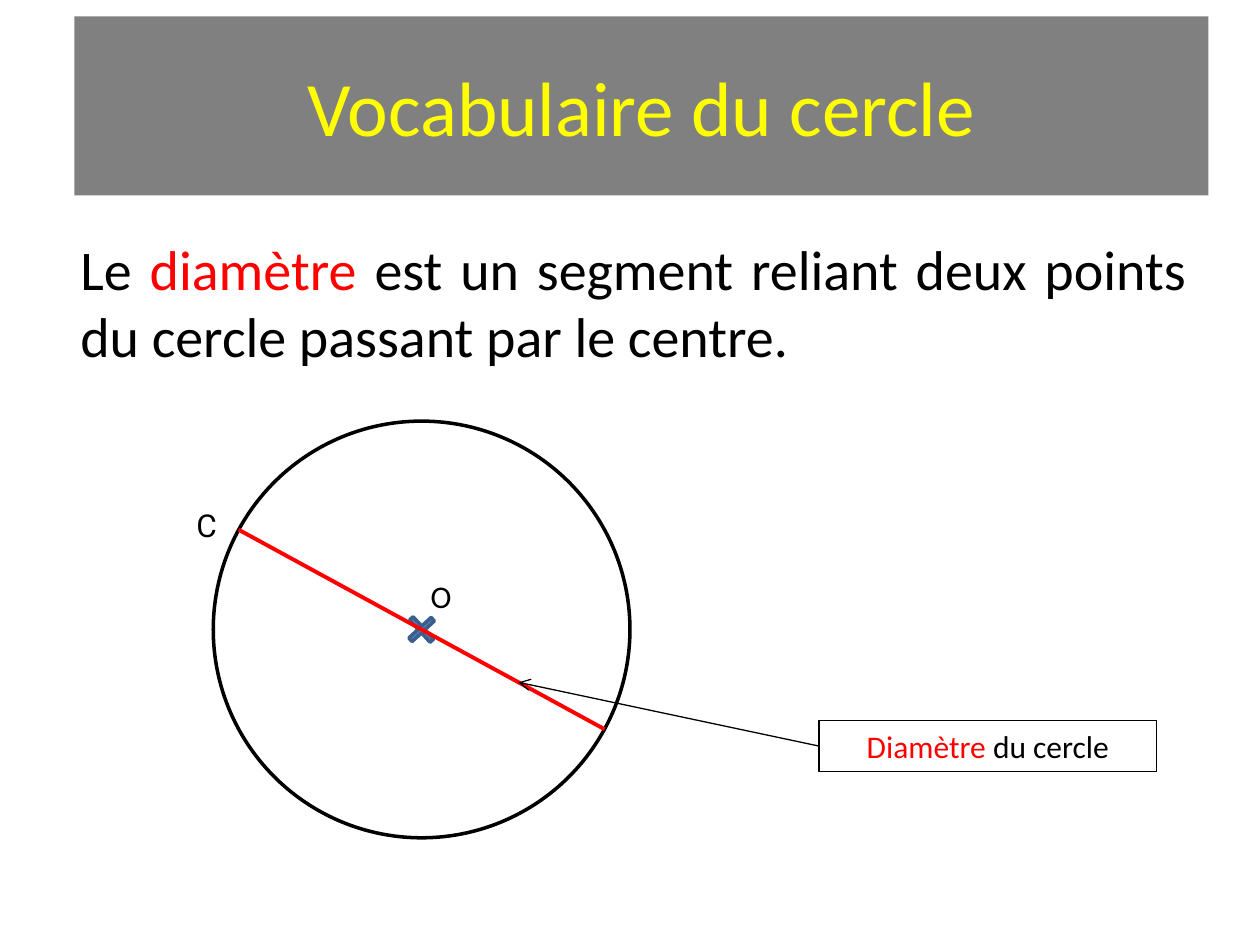
from math import cos, radians, sin

from lxml.etree import SubElement
from pptx import Presentation
from pptx.dml.color import RGBColor
from pptx.enum.shapes import MSO_CONNECTOR, MSO_SHAPE as Shape
from pptx.enum.text import MSO_ANCHOR as Anchor, PP_ALIGN as Align
from pptx.oxml.ns import qn
from pptx.util import Cm, Pt

BLACK, RED, WHITE = "000000", "FF0000", "FFFFFF"
GREY, YELLOW = "808080", "FFFF00"
BLUE, DARK_BLUE = "4F81BD", "3A5F8C"

# Texts are lists of (words, colour)
TITLE = [("Vocabulaire du cercle", YELLOW)]
DEFINITION = [
    ("Le ", BLACK),
    ("diamètre", RED),
    (" est un segment reliant deux points du cercle passant par le centre.", BLACK),
]
CAPTION = [("Diamètre ", RED), ("du cercle", BLACK)]

# Lengths in centimetres: left, top, width, height
TITLE_BOX = (1.5, 0.33, 22.86, 3.61)
DEFINITION_BOX = (1.37, 4.6, 22.81, 3)
CAPTION_BOX = (16.51, 14.53, 6.81, 1.02)
POINT_LABELS = [
    ("O", "Calibri", (8.43, 11.51, 1, 1.02)),
    ("C", "Roboto", (3.71, 10.08, 2.29, 1.02)),
]

CENTRE = (8.5, 12.69)
RADIUS = 4.2
CROSS_SIZE = 0.61
DIAMETER_ANGLE = 28.6
ARROW_REACH = 0.53  # share of the radius where the arrow meets the diameter


def lengths(values):
    return [Cm(value) for value in values]


def paint(fill_or_font, colour):
    if hasattr(fill_or_font, "solid"):
        fill_or_font.solid()
        fill_or_font.fore_color.rgb = RGBColor.from_string(colour)
    else:
        fill_or_font.color.rgb = RGBColor.from_string(colour)


def write(shape, runs, size=18, font="Calibri", align=Align.LEFT, anchor=Anchor.TOP):
    frame = shape.text_frame
    frame.word_wrap = True
    frame.vertical_anchor = anchor
    paragraph = frame.paragraphs[0]
    paragraph.alignment = align
    for words, colour in runs:
        run = paragraph.add_run()
        run.text = words
        run.font.size = Pt(size)
        run.font.name = font
        paint(run.font, colour)


def add_outline(slide, kind, box, colour, width, fill=None):
    shape = slide.shapes.add_shape(kind, *lengths(box))
    shape.shadow.inherit = False
    if fill:
        paint(shape.fill, fill)
    else:
        shape.fill.background()
    paint(shape.line, colour)
    shape.line.width = Pt(width)
    return shape


def add_segment(slide, start, end, colour, width, arrow=False):
    segment = slide.shapes.add_connector(
        MSO_CONNECTOR.STRAIGHT, *lengths(start + end))
    paint(segment.line, colour)
    segment.line.width = Pt(width)
    properties = segment._element.spPr
    if arrow:
        SubElement(properties.find(qn("a:ln")), qn("a:tailEnd"), type="arrow")
    SubElement(properties, qn("a:effectLst"))


def centred_box(size):
    x, y = CENTRE
    return (x - size / 2, y - size / 2, size, size)


def on_diameter(share):
    """Point of the diameter at a share of the radius from the centre."""
    angle = radians(DIAMETER_ANGLE)
    x, y = CENTRE
    return (x + share * RADIUS * cos(angle), y + share * RADIUS * sin(angle))


def main():
    deck = Presentation()
    deck.slide_width, deck.slide_height = Cm(25.4), Cm(19.05)
    slide = deck.slides.add_slide(deck.slide_layouts[5])

    title = slide.shapes.title
    title.left, title.top, title.width, title.height = lengths(TITLE_BOX)
    paint(title.fill, GREY)
    write(title, TITLE, size=44, align=Align.CENTER, anchor=Anchor.MIDDLE)

    definition = add_outline(slide, Shape.RECTANGLE, DEFINITION_BOX, WHITE, 0.75)
    write(definition, DEFINITION, size=32, align=Align.JUSTIFY)

    add_outline(slide, Shape.OVAL, centred_box(2 * RADIUS), BLACK, 2)
    cross = add_outline(
        slide, Shape.CROSS, centred_box(CROSS_SIZE), DARK_BLUE, 2, fill=BLUE)
    cross.adjustments[0] = 0.42
    cross.rotation = 317.3

    for letter, font, box in POINT_LABELS:
        label = slide.shapes.add_textbox(*lengths(box))
        write(label, [(letter, BLACK)], font=font)

    add_segment(slide, on_diameter(-1), on_diameter(1), RED, 2.25)

    caption = add_outline(slide, Shape.RECTANGLE, CAPTION_BOX, BLACK, 0.75)
    write(caption, CAPTION, align=Align.CENTER)
    left, top, _, height = CAPTION_BOX
    add_segment(slide, (left, top + height / 2), on_diameter(ARROW_REACH),
                BLACK, 0.75, arrow=True)

    deck.save("out.pptx")


if __name__ == "__main__":
    main()
